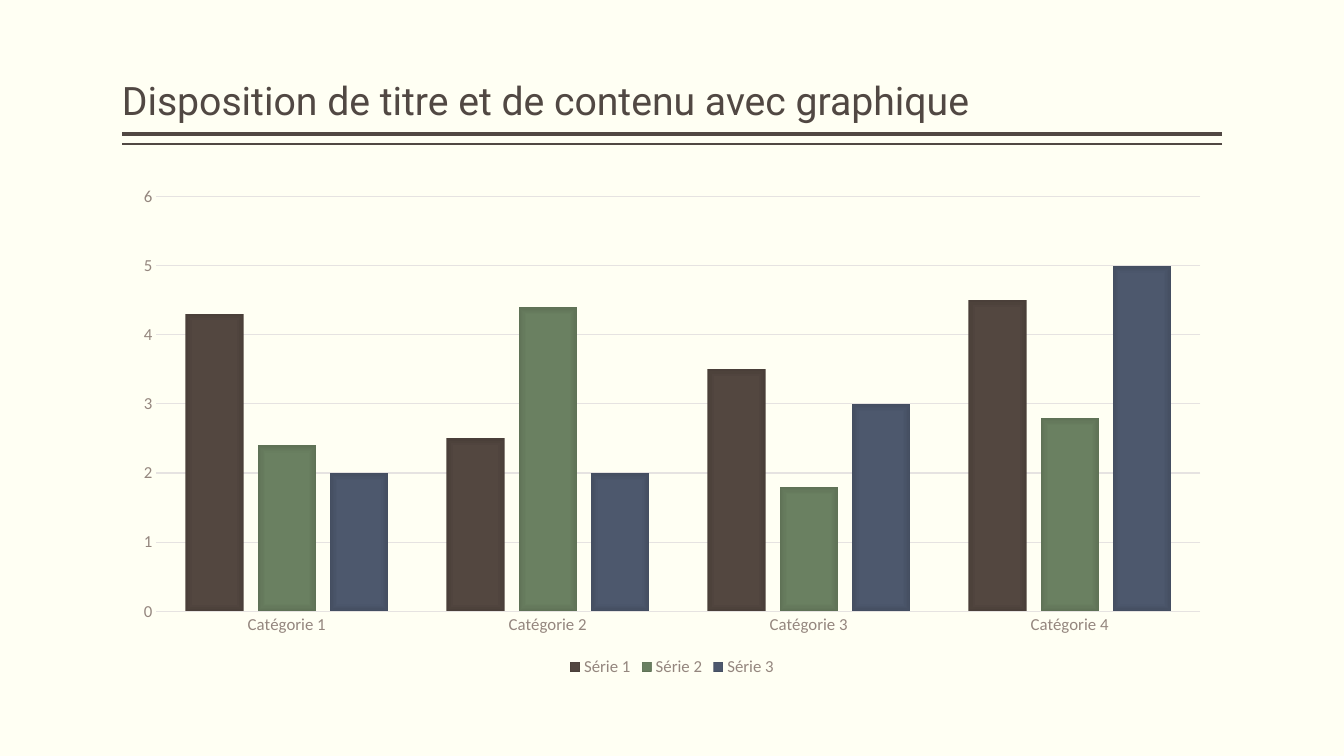
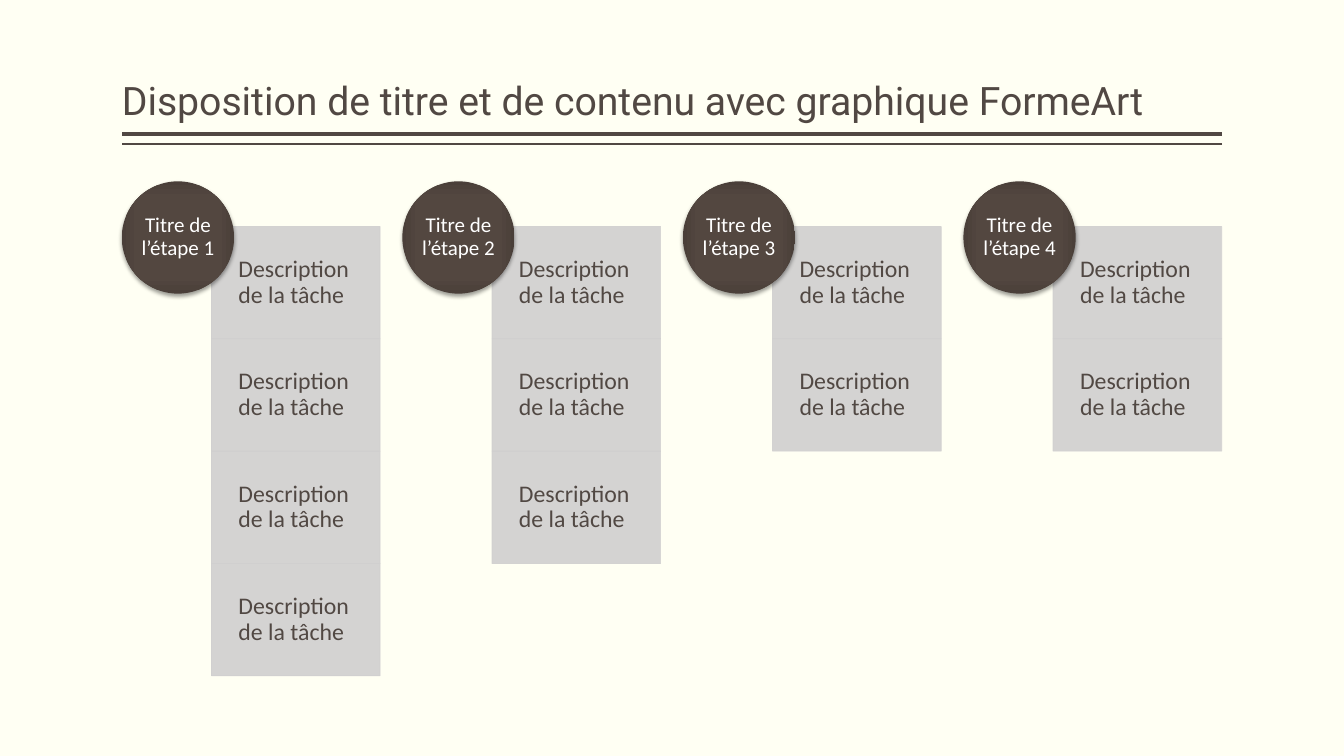
from dataclasses import dataclass

from lxml import etree
from pptx import Presentation
from pptx import util as u
from pptx.chart.data import CategoryChartData
from pptx.dml.color import RGBColor
from pptx.enum import chart as charts, shapes, text
from pptx.oxml import ns, parse_xml
from pptx.slide import Slide
from pptx.util import Cm, Pt

Stops = tuple[tuple[int, str], ...]


@dataclass(frozen=True)
class Theme:
    paper: str = "FFFFF3"
    ink: str = "514843"
    muted: str = "94867E"
    grid: str = "E6E3E1"
    card: str = "D0CFCF"
    white: str = "FFFFFF"
    brown: Stops = ((0, "544740"), (71, "534740"), (100, "4A3F39"))
    green: Stops = ((0, "6B8162"), (71, "6A8061"), (100, "5F7256"))
    blue: Stops = ((0, "4E596E"), (71, "4D586D"), (100, "444E61"))
    head: str = "Roboto"
    body: str = "Calibri"
    title: int = 28
    task: int = 17
    step: int = 15
    label: int = 12


@dataclass(frozen=True)
class Series:
    name: str
    vals: tuple[float, ...]
    stops: Stops


@dataclass(frozen=True)
class Step:
    title: str
    tasks: int


THEME = Theme()
LEFT, WIDTH = Cm(3.07), Cm(27.73)
RULES = ((Cm(3.38), 3), (Cm(3.63), 1))

SERIES = (
    Series("Série 1", (4.3, 2.5, 3.5, 4.5), THEME.brown),
    Series("Série 2", (2.4, 4.4, 1.8, 2.8), THEME.green),
    Series("Série 3", (2, 2, 3, 5), THEME.blue),
)
STEPS = tuple(Step(f"Titre de l’étape {n}", count)
              for n, count in enumerate((4, 3, 2, 2), 1))
TASK = "Description de la tâche"


# Formatting helpers
def rgb(code: str) -> RGBColor:
    return RGBColor.from_string(code)


def style(font, size: int, color: str, face: str = THEME.body) -> None:
    font.size, font.name = Pt(size), face
    font.color.rgb = rgb(color)


def stroke(line, color: str, width: float) -> None:
    line.color.rgb = rgb(color)
    line.width = Pt(width)


def shade(fill, props, stops: Stops) -> None:
    """Fill with a gradient that runs from the centre to the edges."""
    fill.solid()
    marks = "".join(f'<a:gs pos="{pos * 1000}"><a:srgbClr val="{color}"/></a:gs>'
                    for pos, color in stops)
    grad = parse_xml(
        f'<a:gradFill {ns.nsdecls("a")} rotWithShape="1"><a:gsLst>{marks}</a:gsLst>'
        '<a:path path="rect"><a:fillToRect l="50000" t="50000" r="50000" b="50000"/>'
        '</a:path></a:gradFill>')
    props.replace(props.find(ns.qn("a:solidFill")), grad)


def fade(props, share: int) -> None:
    for color in props.iter(ns.qn("a:srgbClr")):
        etree.SubElement(color, ns.qn("a:alpha"), val=str(share * 1000))


def cast(shape) -> None:
    """Give a shape a soft shadow below it."""
    effects = shape._element.spPr.find(ns.qn("a:effectLst"))
    effects.append(parse_xml(
        f'<a:outerShdw {ns.nsdecls("a")} blurRad="{Pt(3.1)}" dist="{Pt(2)}" '
        'dir="5400000" algn="ctr" rotWithShape="0"><a:srgbClr val="000000">'
        '<a:alpha val="38000"/></a:srgbClr></a:outerShdw>'))


def write(shape, words: str, size: int, color: str, align, pads: tuple) -> None:
    frame = shape.text_frame
    frame.word_wrap = True
    frame.vertical_anchor = text.MSO_ANCHOR.MIDDLE
    (frame.margin_left, frame.margin_top,
     frame.margin_right, frame.margin_bottom) = pads
    para = frame.paragraphs[0]
    para.text, para.alignment, para.line_spacing = words, align, 0.9
    style(para.font, size, color)


# Shared slide frame
def add_page(deck, words: str) -> Slide:
    page = deck.slides.add_slide(deck.slide_layouts[5])
    for top, width in RULES:
        rule = page.shapes.add_connector(
            shapes.MSO_CONNECTOR.STRAIGHT, LEFT + WIDTH, top, LEFT, top)
        stroke(rule.line, THEME.ink, width)
        etree.SubElement(rule._element.spPr, ns.qn("a:effectLst"))

    title = page.shapes.title
    title.left, title.top, title.width, title.height = LEFT, Cm(0.2), WIDTH, Cm(3.05)
    frame = title.text_frame
    frame.auto_size = text.MSO_AUTO_SIZE.NONE
    frame.vertical_anchor = text.MSO_ANCHOR.BOTTOM
    frame.margin_left = frame.margin_right = 0
    para = frame.paragraphs[0]
    para.text, para.alignment, para.line_spacing = words, text.PP_ALIGN.LEFT, 0.9
    style(para.font, THEME.title, THEME.ink, THEME.head)
    return page


# Column chart
def add_graph(page: Slide) -> None:
    data = CategoryChartData()
    data.categories = [f"Catégorie {n}" for n in range(1, 5)]
    for item in SERIES:
        data.add_series(item.name, item.vals)
    graph = page.shapes.add_chart(
        charts.XL_CHART_TYPE.COLUMN_CLUSTERED, LEFT, Cm(4.45), WIDTH, Cm(12.7), data).chart
    graph.has_title = False
    style(graph.font, THEME.label, THEME.muted)

    graph.has_legend = True
    graph.legend.position = charts.XL_LEGEND_POSITION.BOTTOM
    graph.legend.include_in_layout = False
    style(graph.legend.font, THEME.label, THEME.muted)

    for axis in (graph.category_axis, graph.value_axis):
        axis.major_tick_mark = axis.minor_tick_mark = charts.XL_TICK_MARK.NONE
        style(axis.tick_labels.font, THEME.label, THEME.muted)
    stroke(graph.category_axis.format.line, THEME.grid, 1)
    value = graph.value_axis
    value.minimum_scale, value.maximum_scale, value.major_unit = 0, 6, 1
    value.format.line.fill.background()
    stroke(value.major_gridlines.format.line, THEME.grid, 0.75)

    plot = graph.plots[0]
    plot.gap_width, plot.overlap, plot.vary_by_categories = 100, -24, False
    for bars, item in zip(plot.series, SERIES):
        bars.invert_if_negative = False
        shade(bars.format.fill, bars._element.get_or_add_spPr(), item.stops)


# Steps with their tasks
def add_step(page: Slide, step: Step, left: u.Length) -> None:
    side, pad = Cm(2.83), Cm(0.33)
    for row in range(step.tasks):
        card = page.shapes.add_shape(
            shapes.MSO_SHAPE.RECTANGLE, left + Cm(2.26), Cm(5.71) + row * side,
            Cm(4.25), side)
        card.shadow.inherit = False
        card.fill.solid()
        card.fill.fore_color.rgb = rgb(THEME.card)
        stroke(card.line, THEME.card, 0.5)
        fade(card._element.spPr, 90)
        write(card, TASK, THEME.task, THEME.ink, text.PP_ALIGN.LEFT,
              (Cm(0.68), pad, pad, pad))

    disc = page.shapes.add_shape(shapes.MSO_SHAPE.OVAL, left, Cm(4.57), side, side)
    disc.shadow.inherit = False
    disc.line.fill.background()
    shade(disc.fill, disc._element.spPr, THEME.brown)
    cast(disc)
    write(disc, step.title, THEME.step, THEME.white, text.PP_ALIGN.CENTER, (0, 0, 0, 0))


def main() -> None:
    deck = Presentation()
    deck.slide_width, deck.slide_height = Cm(33.87), Cm(19.05)
    paper = deck.slide_master.background.fill
    paper.solid()
    paper.fore_color.rgb = rgb(THEME.paper)

    add_graph(add_page(deck, "Disposition de titre et de contenu avec graphique"))

    page = add_page(deck, "Disposition de titre et de contenu avec graphique FormeArt")
    for col, step in enumerate(STEPS):
        add_step(page, step, LEFT + col * Cm(7.07))

    deck.save("out.pptx")


if __name__ == "__main__":
    main()
